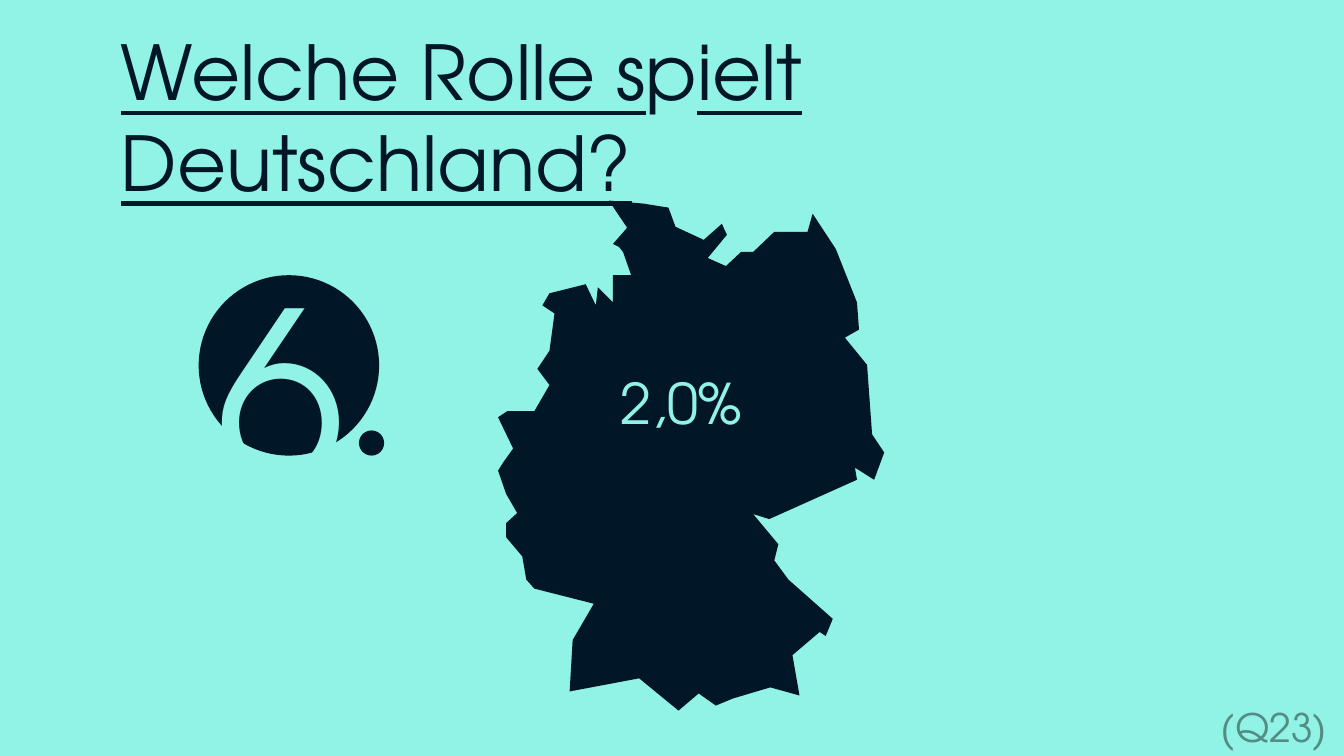
from dataclasses import dataclass

from pptx import Presentation
from pptx.dml.color import RGBColor
from pptx.enum.shapes import MSO_SHAPE
from pptx.enum.text import MSO_AUTO_SIZE
from pptx.util import Inches, Pt

OVAL = MSO_SHAPE.OVAL
GROW = MSO_AUTO_SIZE.SHAPE_TO_FIT_TEXT
MINT = RGBColor(0x91, 0xF3, 0xE6)
NAVY = RGBColor(0x01, 0x16, 0x27)
TEAL = RGBColor(0x53, 0x8C, 0x85)
FACE = "TeX Gyre Adventor"

# Border of Germany, in hundredths of an inch
BORDER = [
    (503, 408), (530, 408), (545, 382), (533, 366), (545, 348), (550, 311),
    (538, 303), (545, 291), (581, 282), (591, 303), (593, 285), (608, 300),
    (608, 273), (626, 273), (618, 250), (614, 245), (608, 242), (622, 226),
    (604, 199), (638, 202), (663, 206), (670, 225), (698, 238), (716, 222),
    (721, 233), (702, 256), (720, 264), (735, 250), (747, 250), (768, 230),
    (801, 230), (806, 212), (829, 247), (850, 300), (852, 327), (838, 335),
    (860, 362), (865, 431), (877, 449), (867, 476), (848, 464), (850, 476),
    (763, 515), (747, 510), (772, 540), (768, 556), (782, 575), (826, 614),
    (819, 631), (813, 627), (786, 650), (793, 690), (764, 682), (727, 693),
    (710, 700), (693, 688), (673, 705), (634, 673), (565, 686), (568, 635),
    (589, 599), (530, 584), (522, 575), (518, 552), (502, 533), (502, 519),
    (513, 509), (502, 490), (494, 467), (499, 459), (509, 445), (494, 414),
]


@dataclass
class Label:
    runs: list[tuple[str, bool]]  # text, underlined
    left: float
    top: float
    width: float
    height: float
    size: int
    color: RGBColor
    wrap: bool = False


@dataclass
class Disc:
    left: float
    top: float
    size: float


TITLE = Label([("Welche Rolle s", True), ("p", False), ("ielt Deutschland?", True)],
              1.1, 0.2, 11.52, 1.01, 54, NAVY, wrap=True)
SHARE = Label([("2,0%", False)], 6.06, 3.61, 1.58, 0.77, 40, MINT)
RANK = Label([("6", False)], 2.05, 2.41, 1.64, 2.89, 166, MINT)
QUERY = Label([("(Q23)", False)], 12.01, 6.93, 1.32, 0.57, 28, TEAL)
BADGE = Disc(1.97, 2.73, 1.79)
DOT = Disc(3.56, 4.27, 0.25)


def paint(shape) -> None:
    """Fill a shape with navy, without outline or shadow."""
    shape.shadow.inherit = False
    shape.fill.solid()
    shape.fill.fore_color.rgb = NAVY
    shape.line.fill.background()


def add_map(slide) -> None:
    form = slide.shapes.build_freeform(*BORDER[0], scale=Inches(0.01))
    form.add_line_segments(BORDER[1:], close=True)
    paint(form.convert_to_shape())


def add_disc(slide, disc: Disc) -> None:
    size = Inches(disc.size)
    paint(slide.shapes.add_shape(OVAL, Inches(disc.left), Inches(disc.top), size, size))


def add_label(slide, label: Label) -> None:
    box = slide.shapes.add_textbox(Inches(label.left), Inches(label.top),
                                   Inches(label.width), Inches(label.height))
    frame = box.text_frame
    frame.word_wrap = label.wrap
    frame.auto_size = GROW
    line = frame.paragraphs[0]
    line.font.name = FACE
    line.font.size = Pt(label.size)
    line.font.color.rgb = label.color
    for text, under in label.runs:
        run = line.add_run()
        run.text = text
        if under:
            run.font.underline = True


def main() -> None:
    deck = Presentation()
    deck.slide_width, deck.slide_height = Inches(13.33), Inches(7.5)
    slide = deck.slides.add_slide(deck.slide_layouts[6])
    slide.background.fill.solid()
    slide.background.fill.fore_color.rgb = MINT
    add_map(slide)
    add_label(slide, TITLE)
    add_label(slide, SHARE)
    add_disc(slide, BADGE)
    add_label(slide, RANK)
    add_disc(slide, DOT)
    add_label(slide, QUERY)
    deck.save("out.pptx")


if __name__ == "__main__":
    main()
